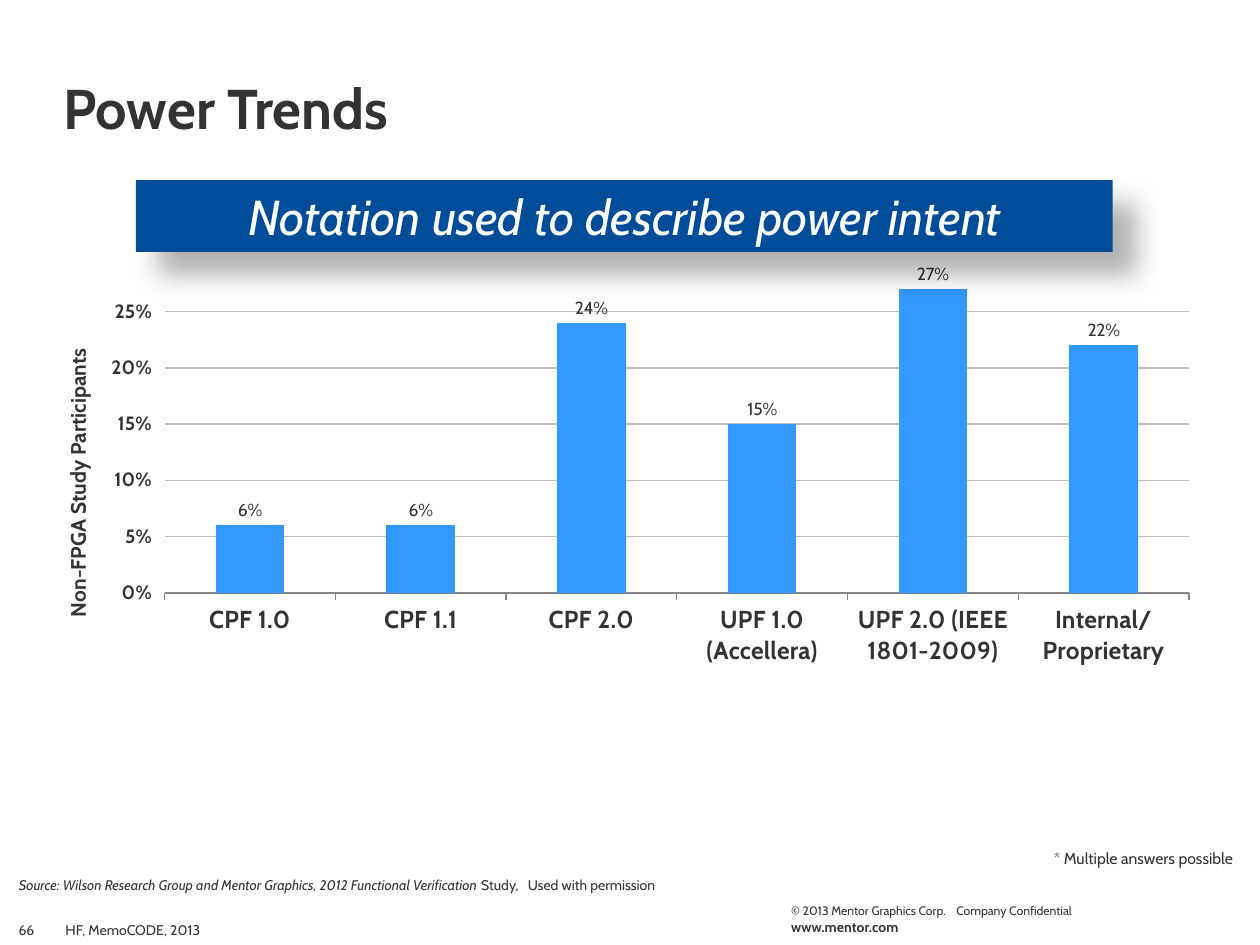
from lxml.etree import SubElement
from pptx import Presentation
from pptx.chart.data import CategoryChartData
from pptx.dml.color import RGBColor
from pptx.enum.chart import XL_CHART_TYPE, XL_LABEL_POSITION, XL_TICK_MARK
from pptx.enum.shapes import MSO_SHAPE
from pptx.enum.text import MSO_ANCHOR, PP_ALIGN
from pptx.oxml import parse_xml
from pptx.oxml.ns import nsdecls, qn
from pptx.util import Cm, Pt

TEXT_COLOR = "333333"


def style(font, size, color=TEXT_COLOR, **flags):
    values = {"name": "Cabin", "size": Pt(size), "bold": False, "italic": False, **flags}
    for attribute, value in values.items():
        setattr(font, attribute, value)
    font.color.rgb = RGBColor.from_string(color)


def set_layout(element, index, **values):
    """Place a chart part by hand, as fractions of the chart area."""
    for old in element.findall(qn("c:layout")):
        element.remove(old)
    items = "".join(f'<c:{key} val="{value}"/>' for key, value in values.items())
    element.insert(index, parse_xml(
        f'<c:layout {nsdecls("c")}><c:manualLayout>{items}</c:manualLayout></c:layout>'))


presentation = Presentation()
presentation.slide_width, presentation.slide_height = Cm(25.4), Cm(19.05)
slide = presentation.slides.add_slide(presentation.slide_layouts[5])

# Title
title = slide.shapes.title
title.left, title.top, title.width, title.height = Cm(0), Cm(0), Cm(25.4), Cm(2.97)
title_frame = title.text_frame
title_frame.text = "Power Trends"
title_frame.vertical_anchor = MSO_ANCHOR.BOTTOM
title_frame.margin_left = title_frame.margin_right = Cm(1.27)
title_frame.paragraphs[0].alignment = PP_ALIGN.LEFT
style(title_frame.paragraphs[0].font, 32, bold=True)

# Chart of power intent notations
notations = CategoryChartData(number_format="0%")
notations.categories = ["CPF 1.0", "CPF 1.1", "CPF 2.0", "UPF 1.0 (Accellera)",
                        "UPF 2.0 (IEEE 1801-2009)", "Internal/Proprietary"]
notations.add_series("Series 1", [0.06, 0.06, 0.24, 0.15, 0.27, 0.22])
chart = slide.shapes.add_chart(XL_CHART_TYPE.COLUMN_CLUSTERED, Cm(0.97), Cm(4.98),
                               Cm(23.47), Cm(13.16), notations).chart
chart.has_legend = False
chart.has_title = False
style(chart.font, 10)
set_layout(chart.plots[0]._element.getparent(), 0, layoutTarget="inner",
           xMode="edge", yMode="edge", x=0.1, y=0.03, w=0.88, h=0.5)

# Columns and their labels
columns = chart.plots[0]
columns.gap_width = 150
columns.vary_by_categories = False
column_fill = columns.series[0].format.fill
column_fill.solid()
column_fill.fore_color.rgb = RGBColor.from_string("3398FF")
columns.has_data_labels = True
label_values = {"show_value": True, "number_format": "0%",
                "number_format_is_linked": False,
                "position": XL_LABEL_POSITION.OUTSIDE_END}
for attribute, value in label_values.items():
    setattr(columns.data_labels, attribute, value)
style(columns.data_labels.font, 10)

# Axes
notation_axis, share_axis = chart.category_axis, chart.value_axis
for axis, size in ((notation_axis, 14), (share_axis, 11)):
    axis.major_tick_mark = XL_TICK_MARK.OUTSIDE
    axis.minor_tick_mark = XL_TICK_MARK.NONE
    style(axis.tick_labels.font, size, bold=True)
notation_axis.format.line.color.rgb = RGBColor.from_string("868686")
share_axis.format.line.fill.background()
share_values = {"minimum_scale": 0, "maximum_scale": 0.29, "major_unit": 0.05,
                "has_major_gridlines": True}
for attribute, value in share_values.items():
    setattr(share_axis, attribute, value)
share_axis.tick_labels.number_format = "0%"
share_axis.tick_labels.number_format_is_linked = False
grid_line = share_axis.major_gridlines.format.line
grid_line.color.rgb = RGBColor.from_string("BFBFBF")
grid_line.width = Pt(0.75)

# Value axis title
share_title = share_axis.axis_title
share_title.text_frame.text = "Non-FPGA Study Participants"
style(share_title.text_frame.paragraphs[0].runs[0].font, 12, bold=True)
share_title._element.find(".//" + qn("a:bodyPr")).set("rot", "-5400000")
set_layout(share_title._element, 1, xMode="edge", yMode="edge", x=0.01, y=0.15)

# Banner with a soft shadow
banner = slide.shapes.add_shape(MSO_SHAPE.RECTANGLE, Cm(2.74), Cm(3.63), Cm(19.69), Cm(1.45))
banner.fill.solid()
banner.fill.fore_color.rgb = RGBColor.from_string("004C99")
banner.line.fill.background()
banner.shadow.inherit = False
shadow = SubElement(banner._element.spPr.find(qn("a:effectLst")), qn("a:outerShdw"),
                    blurRad=str(Pt(15)), dist=str(Pt(18)), dir="2700000",
                    algn="tl", rotWithShape="0")
shadow_color = SubElement(shadow, qn("a:srgbClr"), val="000000")
SubElement(shadow_color, qn("a:alpha"), val="30000")
banner.text_frame.text = "Notation used to describe power intent"
banner.text_frame.paragraphs[0].alignment = PP_ALIGN.CENTER
style(banner.text_frame.paragraphs[0].runs[0].font, 28, "FFFFFF", italic=True)

# Notes and footer: box in cm, left inset, tab stop, anchor, alignment, size, runs
TOP, BOTTOM = MSO_ANCHOR.TOP, MSO_ANCHOR.BOTTOM
LEFT, CENTER, RIGHT = PP_ALIGN.LEFT, PP_ALIGN.CENTER, PP_ALIGN.RIGHT
small_texts = [
    ((20.5, 16.99, 4.6, 0.64), 0.25, None, TOP, RIGHT, 9,
     [("* Multiple answers possible", {})]),
    ((0, 17.53, 15.04, 0.61), 0.38, 10.26, BOTTOM, LEFT, 8,
     [("Source: Wilson Research Group and Mentor Graphics, 2012 Functional Verification ",
       {"italic": True}), ("Study,\tUsed with permission", {})]),
    ((0, 18.41, 1.07, 0.64), 0.25, None, BOTTOM, CENTER, 8, [("66", {})]),
    ((1.07, 18.41, 14.48, 0.64), 0.25, None, BOTTOM, LEFT, 8, [("HF, MemoCODE, 2013", {})]),
    ((15.7, 18.08, 6.73, 0.56), 0.25, 3.33, TOP, LEFT, 7,
     [("© 2013 Mentor Graphics Corp.\tCompany Confidential", {})]),
    ((15.7, 18.39, 4.01, 0.58), 0.25, None, TOP, LEFT, 8, [("www.mentor.com", {"bold": True})]),
]
for box, inset, tab_stop, anchor, alignment, size, runs in small_texts:
    frame = slide.shapes.add_textbox(*map(Cm, box)).text_frame
    frame.word_wrap = True
    frame.margin_left = Cm(inset)
    frame.vertical_anchor = anchor
    paragraph = frame.paragraphs[0]
    paragraph.alignment = alignment
    if tab_stop:
        tabs = SubElement(paragraph._p.get_or_add_pPr(), qn("a:tabLst"))
        SubElement(tabs, qn("a:tab"), pos=str(Cm(tab_stop)), algn="l")
    for text, flags in runs:
        run = paragraph.add_run()
        run.text = text
        style(run.font, size, **flags)

presentation.save("out.pptx")
